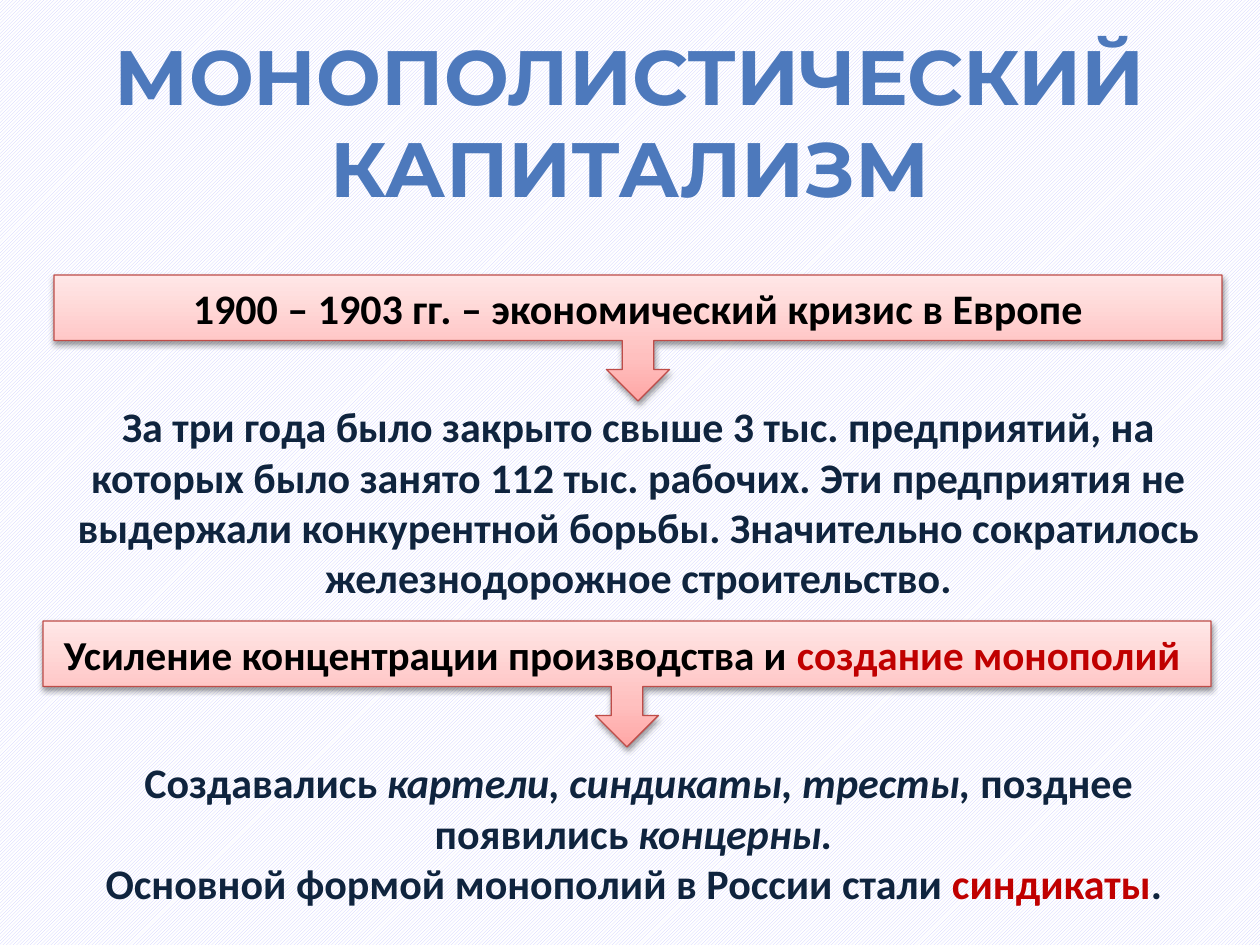
from lxml.etree import SubElement
from pptx import Presentation
from pptx.dml.color import RGBColor
from pptx.enum.dml import MSO_PATTERN
from pptx.enum.shapes import MSO_SHAPE
from pptx.enum.text import MSO_ANCHOR, MSO_AUTO_SIZE, PP_ALIGN
from pptx.oxml.ns import qn
from pptx.util import Pt

PX = 914400 // 126
COLORS = {
    "pattern": "CCCCFF", "paper": "FFFFFF", "navy": "0F243E",
    "black": "000000", "red": "C00000", "border": "BF4C48",
}
TITLE_STOPS = [(0, "7494C9"), (49, "4D79BC"), (50, "346AAA"),
               (92, "325F94"), (100, "315D91")]
CALLOUT_STOPS = [(0, "FFA6A5"), (35, "FFC0BF"), (100, "FFE7E7")]


def rgb(name):
    return RGBColor.from_string(COLORS[name])


def place(sp, box):
    sp.left, sp.top, sp.width, sp.height = (v * PX for v in box)


def set_gradient(fill, props, stops, angle):
    """Gradient of (percent, hex) stops; angle runs counter-clockwise."""
    fill.gradient()
    fill.gradient_angle = angle
    gs_list = props.find(qn("a:gradFill")).find(qn("a:gsLst"))
    for gs in list(gs_list):
        gs_list.remove(gs)
    for pos, color in stops:
        gs = SubElement(gs_list, qn("a:gs"), pos=str(pos * 1000))
        SubElement(gs, qn("a:srgbClr"), val=color)


def add_shadow(sp):
    sp.shadow.inherit = False
    effects = sp._element.spPr.find(qn("a:effectLst"))
    shadow = SubElement(effects, qn("a:outerShdw"), blurRad="40000",
                        dist="20000", dir="5400000", rotWithShape="0")
    color = SubElement(shadow, qn("a:srgbClr"), val=COLORS["black"])
    SubElement(color, qn("a:alpha"), val="38000")


def write(tf, paragraphs, color, size=24):
    """Each paragraph is a list of (text, style); style is '', 'italic' or 'red'."""
    tf.word_wrap = True
    tf.vertical_anchor = MSO_ANCHOR.MIDDLE
    for i, runs in enumerate(paragraphs):
        p = tf.add_paragraph() if i else tf.paragraphs[0]
        p.alignment = PP_ALIGN.CENTER
        p.font.name, p.font.size, p.font.bold = "Calibri", Pt(size), True
        for text, style in runs:
            r = p.add_run()
            r.text = text
            r.font.color.rgb = rgb("red" if style == "red" else color)
            if style == "italic":
                r.font.italic = True


def add_title(s, box, text):
    sp = s.shapes.title
    place(sp, box)
    tf = sp.text_frame
    tf.text = text
    tf.word_wrap = True
    tf.auto_size = MSO_AUTO_SIZE.NONE
    tf.vertical_anchor = MSO_ANCHOR.MIDDLE
    p = tf.paragraphs[0]
    p.alignment = PP_ALIGN.CENTER
    p.font.name, p.font.size, p.font.bold = "Montserrat", Pt(44), True
    r = p.runs[0]
    set_gradient(r.font.fill, r._r.get_or_add_rPr(), TITLE_STOPS, 270)


def add_callout(s, box, runs, size=24):
    sp = s.shapes.add_shape(MSO_SHAPE.DOWN_ARROW_CALLOUT, *(v * PX for v in box))
    sp.adjustments[3] = 0.52
    set_gradient(sp.fill, sp._element.spPr, CALLOUT_STOPS, 90)
    sp.line.color.rgb = rgb("border")
    sp.line.width = Pt(0.75)
    add_shadow(sp)
    write(sp.text_frame, [runs], "black", size)


def add_body(s, box, paragraphs):
    sp = s.shapes.add_textbox(*(v * PX for v in box))
    write(sp.text_frame, paragraphs, "navy")


def main():
    prs = Presentation()
    prs.slide_width, prs.slide_height = 1260 * PX, 945 * PX
    s = prs.slides.add_slide(prs.slide_layouts[5])
    fill = s.background.fill
    fill.patterned()
    fill.pattern = MSO_PATTERN.LIGHT_UPWARD_DIAGONAL
    fill.fore_color.rgb = rgb("pattern")
    fill.back_color.rgb = rgb("paper")

    add_title(s, (35, 38, 1191, 166), "МОНОПОЛИСТИЧЕСКИЙ КАПИТАЛИЗМ")
    add_body(s, (43, 407, 1191, 189), [
        [("За три года было закрыто свыше 3 тыс. предприятий, на которых "
          "было занято 112 тыс. рабочих. Эти предприятия не", "")],
        [("выдержали конкурентной борьбы. Значительно сократилось "
          "железнодорожное строительство.", "")],
    ])
    add_callout(s, (54, 275, 1168, 126),
                [("1900 – 1903 гг. – экономический кризис в Европе", "")])
    add_callout(s, (43, 621, 1168, 126),
                [("Усиление концентрации производства и ", ""),
                 ("создание монополий ", "red")], 23.5)
    add_body(s, (43, 747, 1191, 171), [
        [("Создавались ", ""), ("картели, синдикаты, тресты, ", "italic"),
         ("позднее появились ", ""), ("концерны. ", "italic")],
        [("Основной формой монополий в России стали ", ""),
         ("синдикаты", "red"), (". ", "")],
    ])
    prs.save("out.pptx")


if __name__ == "__main__":
    main()
